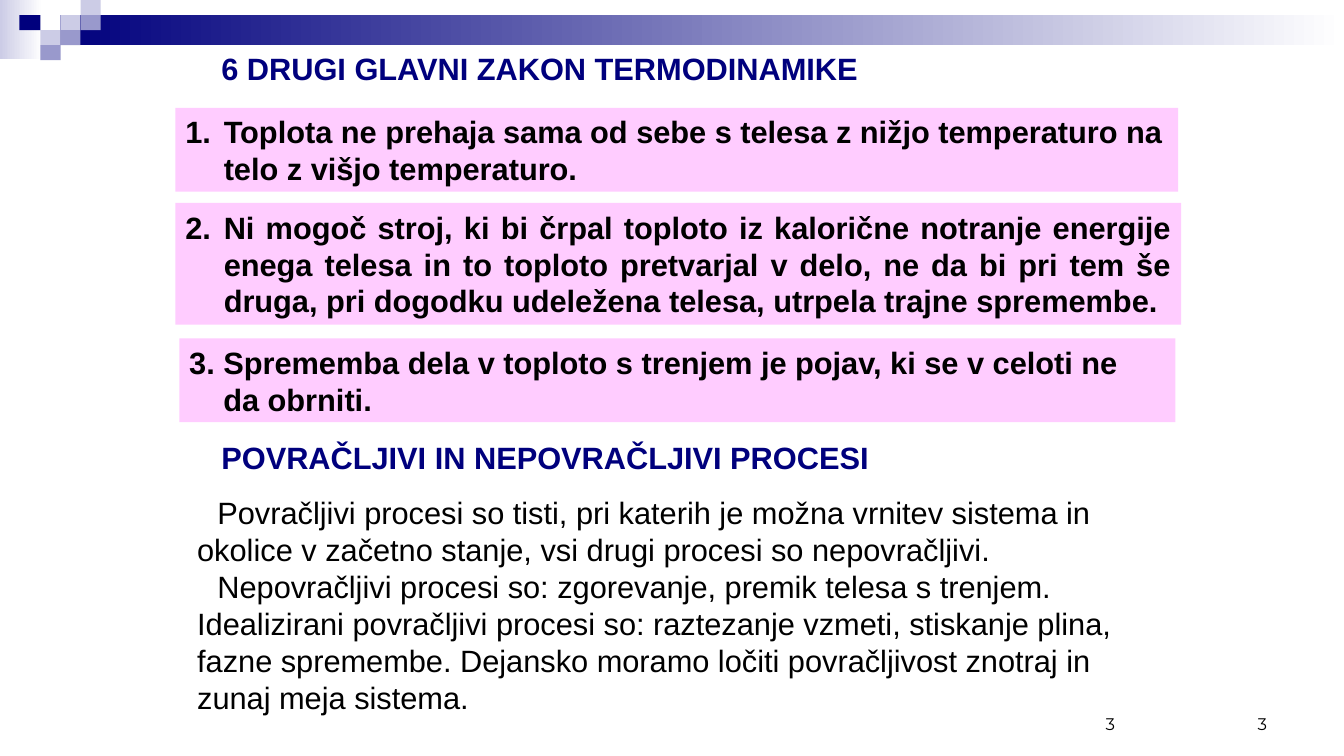
from pptx import Presentation
from pptx import util as u
from pptx.dml.color import RGBColor
from pptx.enum import shapes, text
from lxml import etree

NAVY, PINK, BLACK = "00007D", "FFCCFF", "000000"
LILAC, VIOLET, WHITE = "CCCCE6", "9999CC", "FFFFFF"


def color(hex_string):
    return RGBColor.from_string(hex_string)


def write(frame, paragraphs, size=22, font="Arial", ink=BLACK, bold=False,
          align=text.PP_ALIGN.LEFT, anchor=text.MSO_ANCHOR.MIDDLE,
          left=0, first=0, number=None):
    frame.word_wrap = True
    frame.vertical_anchor = anchor
    for index, lines in enumerate(paragraphs):
        paragraph = frame.paragraphs[0] if index == 0 else frame.add_paragraph()
        paragraph.alignment = align
        properties = paragraph._p.get_or_add_pPr()
        properties.set("marL", str(u.Cm(left)))
        properties.set("indent", str(u.Cm(first)))
        if number:
            bullet = etree.SubElement(properties, properties.tag.replace("pPr", "buAutoNum"))
            bullet.set("type", "arabicPeriod")
            bullet.set("startAt", str(number))
        for position, line in enumerate(lines.split("\n")):
            if position:
                paragraph.add_line_break()
            run = paragraph.add_run()
            run.text = line
            run.font.size = u.Pt(size)
            run.font.name = font
            run.font.bold = bold
            run.font.color.rgb = color(ink)


deck = Presentation()
deck.slide_width, deck.slide_height = u.Cm(33.87), u.Cm(19.05)
slide = deck.slides.add_slide(deck.slide_layouts[6])

header_tiles = [
    (0, 0, 1.07, 1.48, LILAC, True),
    (1.52, 0.38, 32.35, 0.76, NAVY, True),
    (1.52, 0.38, 0.51, 0.38, LILAC, False),
    (2.03, 0, 0.51, 0.38, LILAC, False),
    (2.03, 0.38, 0.51, 0.38, VIOLET, False),
    (1.02, 0.76, 0.51, 0.38, LILAC, False),
    (0.49, 0.38, 0.53, 0.38, NAVY, False),
    (1.52, 0.76, 0.51, 0.38, VIOLET, False),
    (1.02, 1.14, 0.51, 0.38, VIOLET, False),
]
for x, y, width, height, tint, fades in header_tiles:
    tile = slide.shapes.add_shape(shapes.MSO_SHAPE.RECTANGLE,
                                  u.Cm(x), u.Cm(y), u.Cm(width), u.Cm(height))
    tile.shadow.inherit = False
    tile.line.fill.background()
    if fades:
        tile.fill.gradient()
        tile.fill.gradient_angle = 0
        for stop, shade in zip(tile.fill.gradient_stops, (tint, WHITE)):
            stop.color.rgb = color(shade)
    else:
        tile.fill.solid()
        tile.fill.fore_color.rgb = color(tint)

for x, width in ((24.28, 7.9), (22.43, 5.92)):
    page_number = slide.shapes.add_textbox(u.Cm(x), u.Cm(17.35), u.Cm(width), u.Cm(1.27))
    write(page_number.text_frame, ["3"], size=12, font="Montserrat",
          align=text.PP_ALIGN.RIGHT, anchor=text.MSO_ANCHOR.BOTTOM)

headings = [
    (1.12, "6 DRUGI GLAVNI ZAKON TERMODINAMIKE"),
    (10.92, "POVRAČLJIVI IN NEPOVRAČLJIVI PROCESI"),
]
for y, wording in headings:
    heading = slide.shapes.add_textbox(u.Cm(5.33), u.Cm(y), u.Cm(17.2), u.Cm(1.19))
    write(heading.text_frame, [wording], ink=NAVY, bold=True)

laws = [
    (4.42, 2.72, 25.27, 2.11, 0.97, 1, text.PP_ALIGN.LEFT,
     "Toplota ne prehaja sama od sebe s telesa z nižjo temperaturo na\n"
     "telo z višjo temperaturo."),
    (4.42, 5.11, 25.35, 3.07, 0.97, 2, text.PP_ALIGN.JUSTIFY,
     "Ni mogoč stroj, ki bi črpal toploto iz kalorične notranje energije "
     "enega telesa in to toploto pretvarjal v delo, ne da bi pri tem še "
     "druga, pri dogodku udeležena telesa, utrpela trajne spremembe."),
    (4.52, 8.53, 25.1, 2.11, 0.86, None, text.PP_ALIGN.LEFT,
     "3. Sprememba dela v toploto s trenjem je pojav, ki se v celoti ne\n"
     "da obrniti."),
]
for x, y, width, height, indent, number, align, wording in laws:
    law = slide.shapes.add_shape(shapes.MSO_SHAPE.RECTANGLE,
                                 u.Cm(x), u.Cm(y), u.Cm(width), u.Cm(height))
    law.shadow.inherit = False
    law.fill.solid()
    law.fill.fore_color.rgb = color(PINK)
    law.line.fill.background()
    write(law.text_frame, [wording], bold=True, align=align,
          left=indent, first=-indent, number=number)

processes = slide.shapes.add_textbox(u.Cm(4.72), u.Cm(12.29), u.Cm(24.41), u.Cm(5.89))
write(processes.text_frame, [
    "Povračljivi procesi so tisti, pri katerih je možna vrnitev sistema in "
    "okolice v začetno stanje, vsi drugi procesi so nepovračljivi.",
    "Nepovračljivi procesi so: zgorevanje, premik telesa s trenjem. "
    "Idealizirani povračljivi procesi so: raztezanje vzmeti, stiskanje plina, "
    "fazne spremembe. Dejansko moramo ločiti povračljivost znotraj in "
    "zunaj meja sistema.",
], first=0.51)

deck.save("out.pptx")
